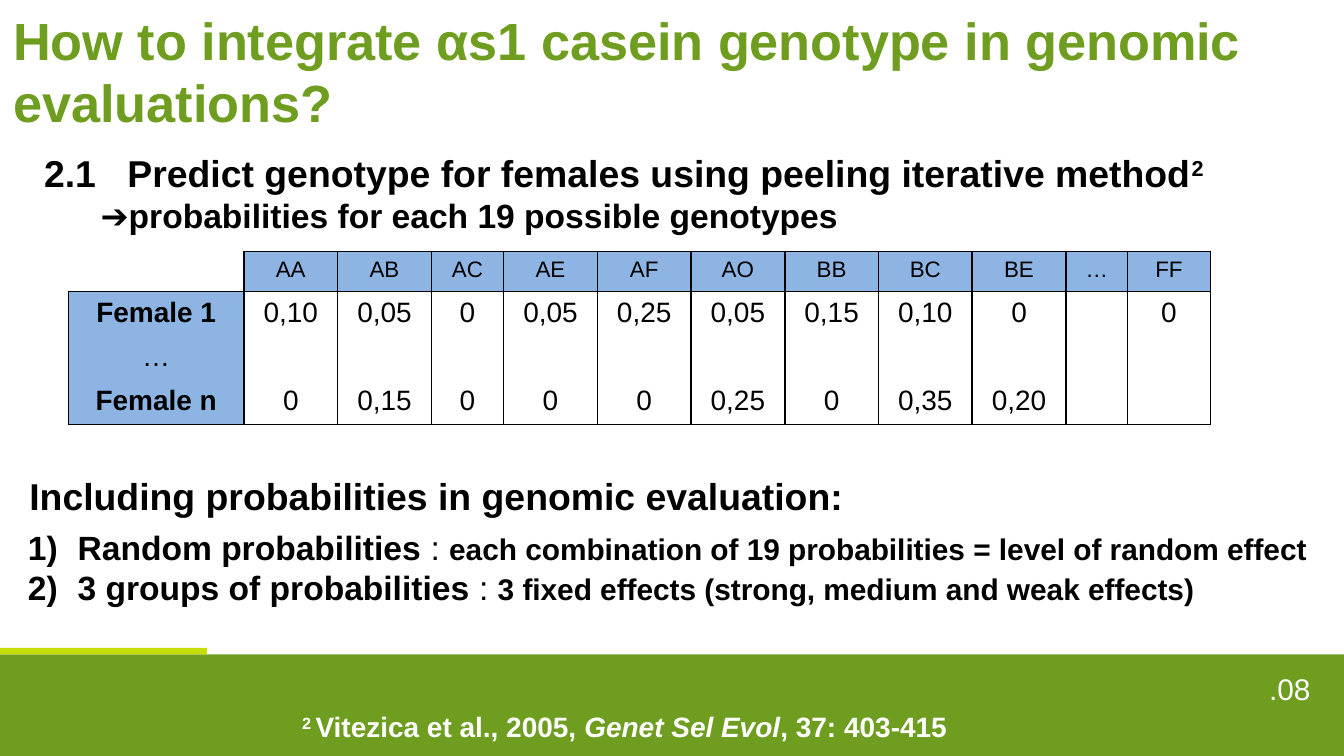
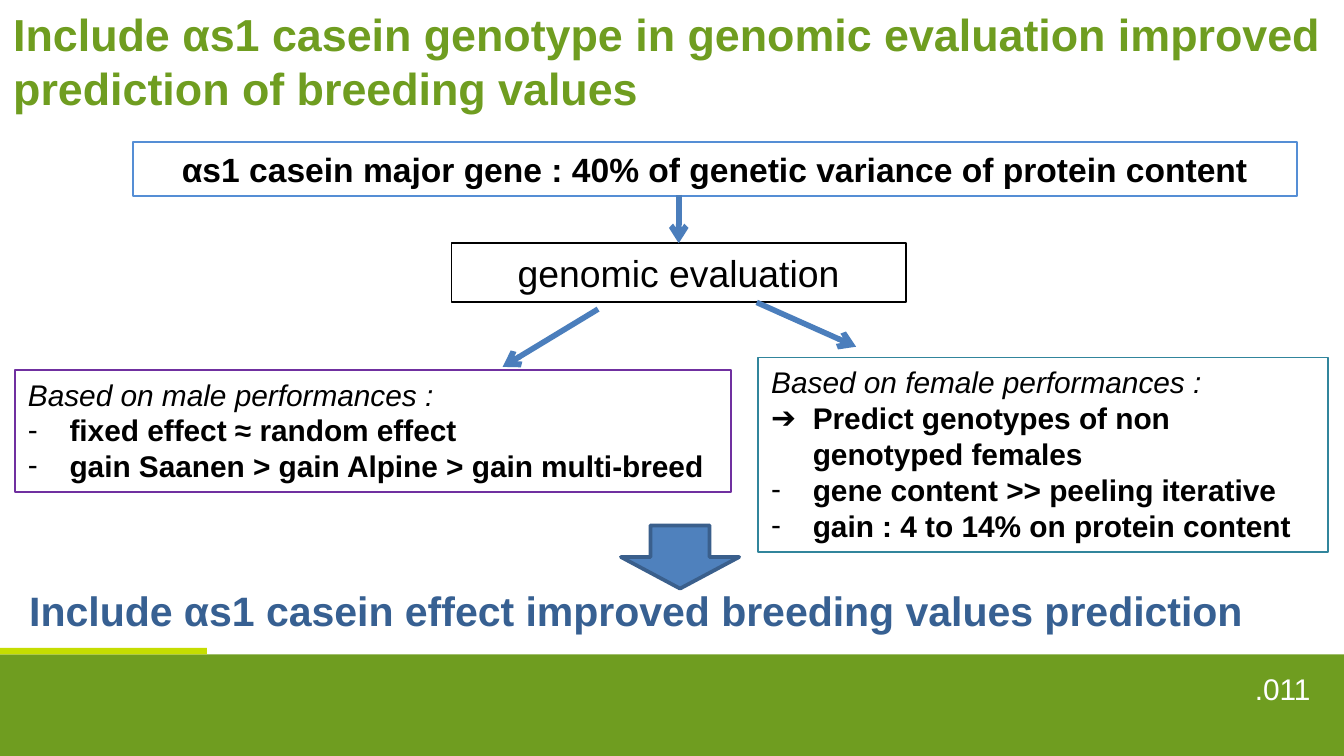
from dataclasses import dataclass
from typing import Optional

from lxml import etree
from pptx import Presentation
from pptx.dml.color import RGBColor
from pptx.enum.shapes import MSO_CONNECTOR, MSO_SHAPE
from pptx.enum.text import MSO_ANCHOR, PP_ALIGN
from pptx.oxml.ns import qn
from pptx.util import Inches, Pt

RECTANGLE, DOWN_ARROW = MSO_SHAPE.RECTANGLE, MSO_SHAPE.DOWN_ARROW
STRAIGHT = MSO_CONNECTOR.STRAIGHT
LEFT, CENTER, RIGHT = PP_ALIGN.LEFT, PP_ALIGN.CENTER, PP_ALIGN.RIGHT
TOP = MSO_ANCHOR.TOP

GREEN = RGBColor(0x6F, 0x9D, 0x20)
LIME = RGBColor(0xC5, 0xDD, 0x01)
WHITE = RGBColor(0xFF, 0xFF, 0xFF)
BLACK = RGBColor(0x00, 0x00, 0x00)
HEADER_BLUE = RGBColor(0x8E, 0xB4, 0xE3)
GENE_BLUE = RGBColor(0x55, 0x8E, 0xD5)
ARROW_BLUE = RGBColor(0x4B, 0x7E, 0xBC)
BLOCK_BLUE = RGBColor(0x4F, 0x81, 0xBD)
BLOCK_EDGE = RGBColor(0x3A, 0x5F, 0x8C)
CONCLUSION_BLUE = RGBColor(0x37, 0x60, 0x92)
PURPLE = RGBColor(0x70, 0x30, 0xA0)
TEAL = RGBColor(0x31, 0x85, 0x9C)

FONT = "Arial"
NUMBERED = "1)"


@dataclass(frozen=True)
class Span:
    text: str
    size: float
    bold: bool = False
    italic: bool = False
    color: RGBColor = BLACK
    superscript: bool = False


@dataclass(frozen=True)
class Para:
    spans: tuple[Span, ...]
    align: PP_ALIGN = LEFT
    bullet: Optional[str] = None
    indent: float = 0
    tab: Optional[float] = None


@dataclass(frozen=True)
class Place:
    left: float
    top: float
    width: float
    height: float

    def lengths(self) -> tuple:
        return tuple(Inches(v) for v in (self.left, self.top, self.width, self.height))


def add_span(paragraph, span: Span) -> None:
    run = paragraph.add_run()
    run.text = span.text
    font = run.font
    font.name, font.size = FONT, Pt(span.size)
    font.bold, font.italic = span.bold, span.italic
    font.color.rgb = span.color
    if span.superscript:
        run._r.get_or_add_rPr().set("baseline", "30000")


def format_para(paragraph, para: Para) -> None:
    """Set alignment, hanging bullet and tab stop."""
    paragraph.alignment = para.align
    props = paragraph._p.get_or_add_pPr()
    props.set("marL", str(Inches(para.indent)))
    if para.bullet:
        props.set("indent", str(-Inches(para.indent)))
        etree.SubElement(props, qn("a:buFont"), typeface=FONT)
        if para.bullet == NUMBERED:
            etree.SubElement(props, qn("a:buAutoNum"), type="arabicParenR")
        else:
            etree.SubElement(props, qn("a:buChar"), char=para.bullet)
    if para.tab:
        tabs = etree.SubElement(props, qn("a:tabLst"))
        etree.SubElement(tabs, qn("a:tab"), pos=str(Inches(para.tab)), algn="l")


def write(frame, paras: list[Para]) -> None:
    frame.word_wrap = True
    frame.vertical_anchor = TOP
    for index, para in enumerate(paras):
        paragraph = frame.add_paragraph() if index else frame.paragraphs[0]
        format_para(paragraph, para)
        for span in para.spans:
            add_span(paragraph, span)


def add_text(slide, place: Place, *paras: Para) -> None:
    write(slide.shapes.add_textbox(*place.lengths()).text_frame, list(paras))


def add_block(slide, place: Place, *paras: Para, fill: Optional[RGBColor] = None,
              line: Optional[RGBColor] = None, line_width: float = 1, preset=RECTANGLE):
    block = slide.shapes.add_shape(preset, *place.lengths())
    block.shadow.inherit = False
    if fill is None:
        block.fill.background()
    else:
        block.fill.solid()
        block.fill.fore_color.rgb = fill
    if line is None:
        block.line.fill.background()
    else:
        block.line.color.rgb = line
        block.line.width = Pt(line_width)
    if paras:
        write(block.text_frame, list(paras))
    return block


def add_arrow(slide, start: tuple[float, float], end: tuple[float, float]):
    arrow = slide.shapes.add_connector(STRAIGHT, *(Inches(v) for v in start + end))
    arrow.line.color.rgb = ARROW_BLUE
    arrow.line.width = Pt(3)
    etree.SubElement(arrow.line._get_or_add_ln(), qn("a:tailEnd"), type="arrow")
    etree.SubElement(arrow._element.spPr, qn("a:effectLst"))
    return arrow


def add_base_slide(deck, number: str):
    """Add a blank slide with the footer bands and the page number."""
    slide = deck.slides.add_slide(deck.slide_layouts[6])
    add_block(slide, Place(0, 4.87, 10, 0.76), fill=GREEN)
    add_block(slide, Place(0, 4.82, 1.54, 0.05), fill=LIME)
    add_text(slide, Place(8.62, 4.94, 1.23, 0.27),
             Para((Span(number, 16, color=WHITE),), RIGHT))
    return slide


def add_title(slide, place: Place, text: str, size: float) -> None:
    add_block(slide, place, Para((Span(text, size, bold=True, color=GREEN),)), fill=WHITE)


def style_cell(cell, edges: str, fill: Optional[RGBColor]) -> None:
    """Draw the black edges named in edges (L, R, T, B) and set the fill."""
    props = cell._tc.get_or_add_tcPr()
    for side in "LRTB":
        if side in edges:
            line = etree.SubElement(props, qn(f"a:ln{side}"), w=str(Pt(1)))
            solid = etree.SubElement(line, qn("a:solidFill"))
            etree.SubElement(solid, qn("a:srgbClr"), val=str(BLACK))
        else:
            line = etree.SubElement(props, qn(f"a:ln{side}"), w="0")
            etree.SubElement(line, qn("a:noFill"))
    if fill is None:
        cell.fill.background()
    else:
        cell.fill.solid()
        cell.fill.fore_color.rgb = fill
    cell.margin_left = cell.margin_right = Inches(0.1)
    cell.margin_top = cell.margin_bottom = Inches(0.04)


GENOTYPE_ROWS = [
    ["", "AA", "AB", "AC", "AE", "AF", "AO", "BB", "BC", "BE", "…", "FF"],
    ["Female 1", "0,10", "0,05", "0", "0,05", "0,25", "0,05", "0,15", "0,10", "0", "", "0"],
    ["…"] + [""] * 11,
    ["Female n", "0", "0,15", "0", "0", "0", "0,25", "0", "0,35", "0,20", "", ""],
]
TABLE_PLACE = Place(0.51, 1.87, 8.5, 1.3)
COLUMN_SHARES = [1.31, 0.7, 0.7, 0.54] + [0.7] * 6 + [0.46, 0.62]
ROW_HEIGHTS = [0.3, 0.33, 0.33, 0.33]
ROW_EDGES = ["LRTB", "LRT", "LR", "LRB"]


def add_genotype_table(slide) -> None:
    table = slide.shapes.add_table(len(ROW_HEIGHTS), len(COLUMN_SHARES),
                                   *TABLE_PLACE.lengths()).table
    table.first_row = table.horz_banding = False
    for column, share in zip(table.columns, COLUMN_SHARES):
        column.width = Inches(TABLE_PLACE.width * share / sum(COLUMN_SHARES))
    for r, values in enumerate(GENOTYPE_ROWS):
        table.rows[r].height = Inches(ROW_HEIGHTS[r])
        size = 15 if r else 12
        for c, value in enumerate(values):
            cell = table.cell(r, c)
            corner = r == c == 0
            is_header = (r == 0 or c == 0) and not corner
            style_cell(cell, "RB" if corner else ROW_EDGES[r],
                       HEADER_BLUE if is_header else None)
            paragraph = cell.text_frame.paragraphs[0]
            paragraph.alignment = CENTER
            if value:
                add_span(paragraph, Span(value, size, bold=value.startswith("Female")))
            else:
                etree.SubElement(paragraph._p, qn("a:endParaRPr"), sz=str(size * 100))


def numbered_option(name: str, detail: str) -> Para:
    return Para((Span(name + " ", 18, bold=True), Span(": ", 18), Span(detail, 16, bold=True)),
                bullet=NUMBERED, indent=0.37)


def build_integration_slide(deck) -> None:
    slide = add_base_slide(deck, ".08")
    add_genotype_table(slide)
    add_title(slide, Place(0, 0.01, 10.04, 1.04),
              "How to integrate αs1 casein genotype in genomic evaluations?", 28)
    add_text(slide, Place(2.15, 5.23, 5.83, 0.35), Para((
        Span("2 ", 15, bold=True, color=WHITE, superscript=True),
        Span("Vitezica et al., 2005, ", 15, bold=True, color=WHITE),
        Span("Genet Sel Evol", 15, bold=True, italic=True, color=WHITE),
        Span(", 37: 403-415", 15, bold=True, color=WHITE))))
    add_text(slide, Place(0.11, 3.87, 9.8, 0.99),
             numbered_option("Random probabilities",
                             "each combination of 19 probabilities = level of random effect"),
             numbered_option("3 groups of probabilities",
                             "3 fixed effects (strong, medium and weak effects)"))
    add_text(slide, Place(0.12, 3.47, 7.01, 0.45),
             Para((Span("Including probabilities in genomic evaluation:", 20, bold=True),)))
    add_text(slide, Place(0.23, 1.07, 9.76, 2.26),
             Para((Span("2.1\tPredict genotype for females using peeling iterative method",
                        20, bold=True),
                   Span("2", 20, bold=True, superscript=True)), tab=0.62),
             Para((Span("➔probabilities for each 19 possible genotypes", 18, bold=True),),
                  indent=0.42))


def performance_paras(heading: str, findings: list[tuple[str, str]]) -> list[Para]:
    return [Para((Span(heading, 16, italic=True),))] + [
        Para((Span(text, 16, bold=True),), bullet=bullet, indent=0.31)
        for bullet, text in findings]


def build_conclusion_slide(deck) -> None:
    slide = add_base_slide(deck, ".011")
    add_title(slide, Place(0, 0, 10, 0.91),
              "Include αs1 casein genotype in genomic evaluation improved "
              "prediction of breeding values", 24)
    add_block(slide, Place(0.99, 1.06, 8.66, 0.4),
              Para((Span("αs1 casein major gene : 40% of genetic variance of protein content",
                         18, bold=True),), CENTER), line=GENE_BLUE)
    down_arrow = Place(4.62, 3.91, 0.88, 0.47)
    add_block(slide, down_arrow, fill=BLOCK_BLUE, line=BLOCK_EDGE,
              line_width=2, preset=DOWN_ARROW)
    add_text(slide, Place(0.07, 4.31, 9.33, 0.47),
             Para((Span("Include αs1 casein effect improved breeding values prediction", 22,
                        bold=True, color=CONCLUSION_BLUE),), CENTER))
    add_block(slide, Place(0.11, 2.75, 5.33, 0.91), *performance_paras(
        "Based on male performances :",
        [("-", "fixed effect ≈ random effect"),
         ("-", "gain Saanen > gain Alpine > gain multi-breed")]), line=PURPLE)
    evaluation = add_block(slide, Place(3.36, 1.81, 3.38, 0.44),
                           Para((Span("genomic evaluation", 20),), CENTER), line=BLACK)
    add_block(slide, Place(5.64, 2.66, 4.24, 1.45), *performance_paras(
        "Based on female performances :",
        [("➔", "Predict genotypes of non genotyped females"),
         ("-", "gene content >> peeling iterative"),
         ("-", "gain : 4 to 14% on protein content")]), line=TEAL)
    add_arrow(slide, (5.05, 1.45), (5.05, 1.81)).end_connect(evaluation, 0)
    add_arrow(slide, (4.45, 2.3), (3.74, 2.73))
    add_arrow(slide, (5.63, 2.25), (6.37, 2.58))


def main() -> None:
    deck = Presentation()
    deck.slide_width = Inches(10)
    deck.slide_height = deck.slide_width * 9 // 16
    build_integration_slide(deck)
    build_conclusion_slide(deck)
    deck.save("out.pptx")


if __name__ == "__main__":
    main()
